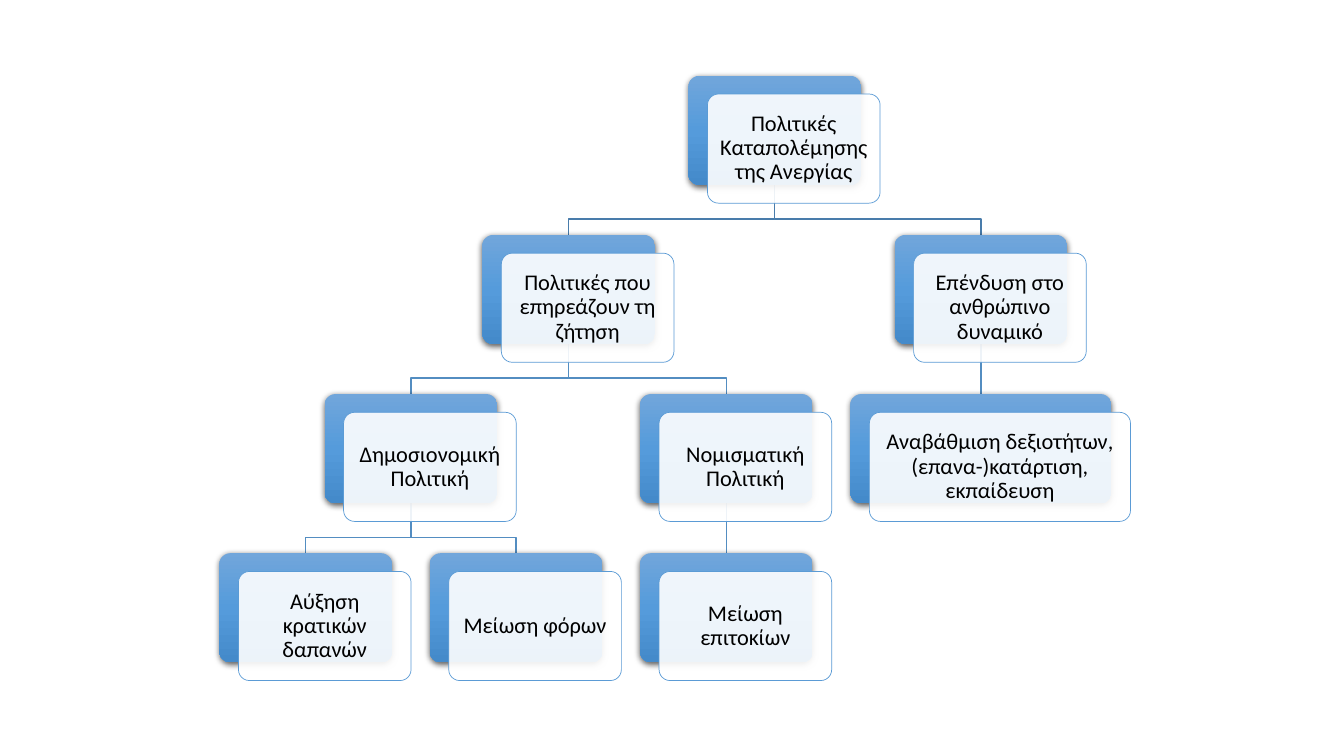
from copy import deepcopy
from dataclasses import dataclass

from lxml import etree
from pptx import Presentation
from pptx.dml.color import RGBColor
from pptx.enum.shapes import MSO_CONNECTOR, MSO_SHAPE
from pptx.enum.text import MSO_ANCHOR, PP_ALIGN
from pptx.oxml.ns import qn
from pptx.util import Cm, Pt

ROUND = MSO_SHAPE.ROUNDED_RECTANGLE
STRAIGHT = MSO_CONNECTOR.STRAIGHT
MIDDLE = MSO_ANCHOR.MIDDLE
CENTER = PP_ALIGN.CENTER

WHITE = RGBColor(0xFF, 0xFF, 0xFF)
BLACK = RGBColor(0x00, 0x00, 0x00)
EDGE = RGBColor(0x5B, 0x9B, 0xD5)
LINKS = [RGBColor(0x49, 0x7C, 0xAB), RGBColor(0x53, 0x8D, 0xC1)]
BLUES = [RGBColor(0x71, 0xA6, 0xDB), RGBColor(0x55, 0x9B, 0xDB),
         RGBColor(0x44, 0x8A, 0xCA)]

WIDE, HIGH = 4.35, 2.75
GAP, STEP = 0.95, 4.01
BEND = 0.86
SHIFT_X, SHIFT_Y = 0.48, 0.46


@dataclass
class Node:
    """A card of the tree with the cards below it."""
    text: str
    kids: tuple = ()
    width: float = WIDE
    mid: float = 0
    level: int = 0


TREE = Node("Πολιτικές Καταπολέμησης της Ανεργίας", (
    Node("Πολιτικές που επηρεάζουν τη ζήτηση", (
        Node("Δημοσιονομική Πολιτική", (
            Node("Αύξηση κρατικών δαπανών"),
            Node("Μείωση φόρων"))),
        Node("Νομισματική Πολιτική", (Node("Μείωση επιτοκίων"),)))),
    Node("Επένδυση στο ανθρώπινο δυναμικό", (
        Node("Αναβάθμιση δεξιοτήτων, (επανα-)κατάρτιση, εκπαίδευση",
             width=6.58),))))


def arrange(node, left, level=0):
    """Set leaves side by side, centre parents, and return the next left."""
    node.level = level
    if not node.kids:
        node.mid = left + node.width / 2
        return left + node.width + GAP
    for kid in node.kids:
        left = arrange(kid, left, level + 1)
    node.mid = (node.kids[0].mid + node.kids[-1].mid) / 2
    return left


def walk(node):
    """Yield a node and all nodes below it."""
    yield node
    for kid in node.kids:
        yield from walk(kid)


def write(shape, text, size=16, font="Calibri", color=BLACK, inset=0.18):
    """Put centred text into a shape."""
    frame = shape.text_frame
    frame.word_wrap = True
    frame.vertical_anchor = MIDDLE
    frame.margin_left = frame.margin_right = Cm(inset)
    frame.margin_top = frame.margin_bottom = Cm(inset)
    para = frame.paragraphs[0]
    para.alignment = CENTER
    para.line_spacing = 0.9
    run = para.add_run()
    run.text = text
    run.font.size, run.font.name = Pt(size), font
    run.font.color.rgb = color


def shade(shape):
    """Give a shape the blue gradient and a soft shadow."""
    fill = shape.fill
    fill.gradient()
    fill.gradient_angle = 270
    stops = shape._element.spPr.find(".//" + qn("a:gsLst"))
    stops.append(deepcopy(stops[-1]))
    for i, (stop, color) in enumerate(zip(fill.gradient_stops, BLUES)):
        stop.position = i / 2
        stop.color.rgb = color
    effects = shape._element.spPr.find(qn("a:effectLst"))
    shadow = etree.SubElement(effects, qn("a:outerShdw"), blurRad="57150",
                              dist="19050", dir="5400000", algn="ctr",
                              rotWithShape="0")
    tint = etree.SubElement(shadow, qn("a:srgbClr"), val=str(BLACK))
    etree.SubElement(tint, qn("a:alpha"), val="63000")


def plate(slide, left, top, width):
    """Add one plain rounded plate."""
    shape = slide.shapes.add_shape(ROUND, Cm(left), Cm(top), Cm(width),
                                   Cm(HIGH))
    shape.adjustments[0] = 0.1
    shape.shadow.inherit = False
    return shape


def card(slide, node, top):
    """Draw a blue plate with a shifted, see-through text plate on it."""
    left = node.mid - node.width / 2
    back = plate(slide, left, top, node.width)
    shade(back)
    back.line.fill.background()
    front = plate(slide, left + SHIFT_X, top + SHIFT_Y, node.width)
    front.fill.solid()
    front.fill.fore_color.rgb = WHITE
    tint = front._element.spPr.find(".//" + qn("a:srgbClr"))
    etree.SubElement(tint, qn("a:alpha"), val="90000")
    front.line.color.rgb = EDGE
    front.line.width = Pt(0.5)
    write(front, node.text)


def link(slide, node, kid, top):
    """Join a card to one below it, with a bend where they are not in line."""
    start, end = top + HIGH, top + STEP
    if abs(node.mid - kid.mid) < 0.01:
        line = slide.shapes.add_connector(
            STRAIGHT, Cm(node.mid), Cm(start), Cm(kid.mid), Cm(end))
        etree.SubElement(line._element.spPr, qn("a:effectLst"))
    else:
        bend = start + BEND
        path = slide.shapes.build_freeform(Cm(node.mid), Cm(start))
        path.add_line_segments([(Cm(node.mid), Cm(bend)),
                                (Cm(kid.mid), Cm(bend)),
                                (Cm(kid.mid), Cm(end))], close=False)
        line = path.convert_to_shape()
        line.fill.background()
        line.shadow.inherit = False
    line.line.color.rgb = LINKS[min(node.level, 1)]
    line.line.width = Pt(1)


def chart(slide, root, left, top):
    """Draw the whole tree from the given corner, links at the back."""
    arrange(root, left)
    for node in walk(root):
        for kid in node.kids:
            link(slide, node, kid, top + node.level * STEP)
    for node in walk(root):
        card(slide, node, top + node.level * STEP)


def main():
    """Build and save the slide."""
    deck = Presentation()
    deck.slide_width, deck.slide_height = Cm(33.87), Cm(19.05)
    slide = deck.slides.add_slide(deck.slide_layouts[6])
    chart(slide, TREE, 5.53, 1.91)
    deck.save("out.pptx")


if __name__ == "__main__":
    main()
